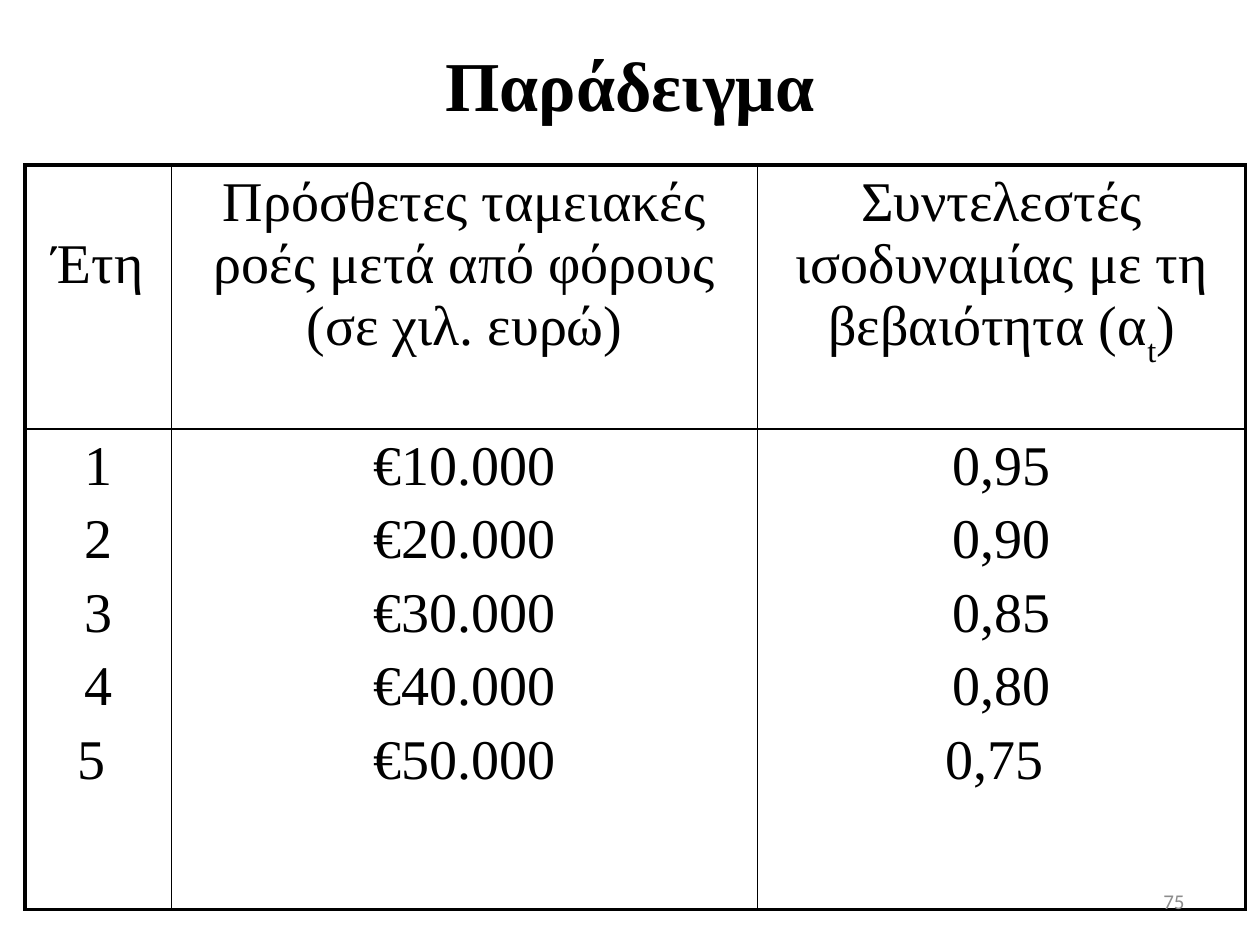
from pptx import Presentation
from pptx.dml.color import RGBColor as RGB
from pptx.enum.text import MSO_ANCHOR as ANCHOR, PP_ALIGN as ALIGN
from pptx.oxml.ns import qn
from pptx.util import Pt
from lxml.etree import SubElement

COLORS = {"black": "000000", "gray": "8C8C8C"}


def add_text(p, text, size=32, font="Times New Roman", color="black",
             bold=False, align=ALIGN.CENTER, before=6.4, base=None):
    p.alignment = align
    p.space_before = Pt(before)
    r = p.add_run()
    r.text = text
    r.font.size = Pt(size)
    r.font.name = font
    r.font.bold = bold
    r.font.color.rgb = RGB.from_string(COLORS[color])
    if base:
        r.font._element.set("baseline", str(base))


def add_border(cell, side, width):
    ln = SubElement(cell._tc.get_or_add_tcPr(), qn(f"a:ln{side}"), w=str(Pt(width)))
    fill = SubElement(ln, qn("a:solidFill"))
    SubElement(fill, qn("a:srgbClr"), val=COLORS["black"])


prs = Presentation()
prs.slide_width, prs.slide_height = Pt(720), Pt(540)
s = prs.slides.add_slide(prs.slide_layouts[6])

headers = [
    [("Έτη", None)],
    [("Πρόσθετες ταμειακές ροές μετά από φόρους (σε χιλ. ευρώ)", None)],
    [("Συντελεστές ισοδυναμίας με τη βεβαιότητα (α", None), ("t", -30000), (")", None)],
]
values = [
    ["1", "2", "3", "4", "5 "],
    ["€10.000", "€20.000", "€30.000", "€40.000", "€50.000"],
    ["0,95", "0,90", "0,85", "0,80", "0,75 "],
]
widths = [83.8, 335, 278.8]
heights = [150.8, 274.6]

table = s.shapes.add_table(2, 3, Pt(14.2), Pt(94.4), Pt(sum(widths)), Pt(sum(heights))).table
table.first_row = table.horz_banding = False
for row, height in zip(table.rows, heights):
    row.height = Pt(height)

for c, width in enumerate(widths):
    table.columns[c].width = Pt(width)
    header, body = table.cell(0, c), table.cell(1, c)
    for text, base in headers[c]:
        add_text(header.text_frame.paragraphs[0], text, base=base)
    tf = body.text_frame
    for i, value in enumerate(values[c]):
        p = tf.add_paragraph() if i else tf.paragraphs[0]
        add_text(p, value)
    for r, cell in enumerate((header, body)):
        outer = {"L": c == 0, "R": c == 2, "T": r == 0, "B": r == 1}
        for side, is_outer in outer.items():
            add_border(cell, side, 2.25 if is_outer else 1)
        cell.fill.background()
table.cell(0, 0).margin_top = Pt(39)

labels = [
    ("75", (516, 500.4, 168, 28.8), ANCHOR.MIDDLE,
     dict(size=12, font="Calibri", color="gray", align=ALIGN.RIGHT, before=0)),
    ("Παράδειγμα", (0, 20.2, 720, 39.6), ANCHOR.TOP, dict(size=40, bold=True, before=8)),
]
for text, box, anchor, style in labels:
    tf = s.shapes.add_textbox(*map(Pt, box)).text_frame
    tf.word_wrap = True
    tf.vertical_anchor = anchor
    add_text(tf.paragraphs[0], text, **style)

prs.save("out.pptx")
